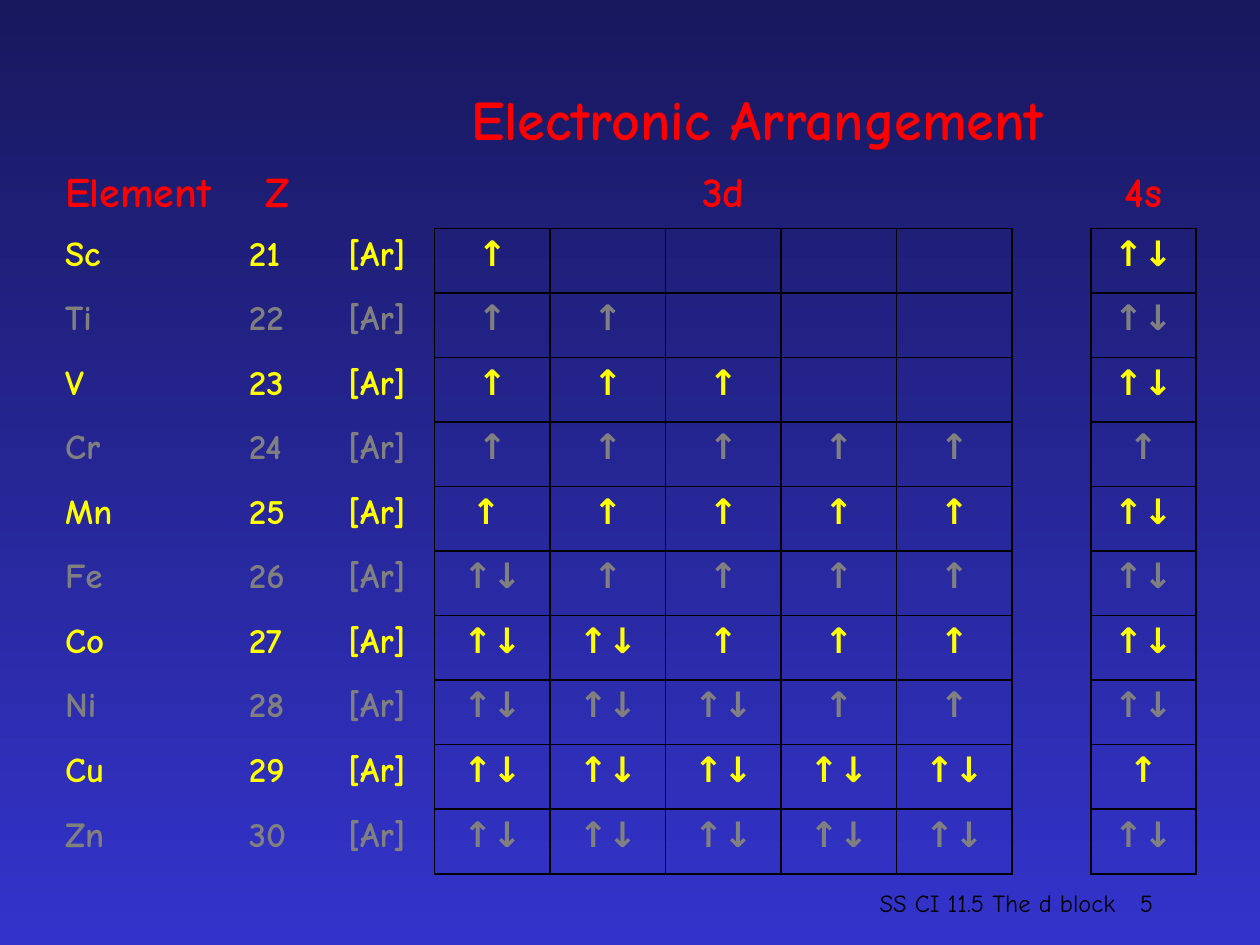
from dataclasses import dataclass

from lxml.etree import SubElement
from pptx import Presentation
from pptx.dml.color import RGBColor
from pptx.enum.text import MSO_ANCHOR, PP_ALIGN
from pptx.oxml.ns import qn
from pptx.slide import Slide
from pptx.util import Inches, Pt

UNIT = Inches(10) / 24  # the slide is a grid of 24 columns by 18 rows
RED, YELLOW, GRAY, BLACK = "FF0000", "FFFF00", "808080", "000000"
LEFT, CENTER, RIGHT = PP_ALIGN.LEFT, PP_ALIGN.CENTER, PP_ALIGN.RIGHT

# Symbol, electrons in 3d, electrons in 4s
ELEMENTS = [
    ("Sc", 1, 2), ("Ti", 2, 2), ("V", 3, 2), ("Cr", 5, 1), ("Mn", 5, 2),
    ("Fe", 6, 2), ("Co", 7, 2), ("Ni", 8, 2), ("Cu", 10, 1), ("Zn", 10, 2),
]
FIRST_ATOMIC_NUMBER = 21
FIRST_ELEMENT_ROW = 2
ORBITALS = 5
FIRST_3D, COLUMN_4S = 3, 9
COLUMN_WIDTHS = [3.5, 1.58] + [2.2] * (1 + ORBITALS) + [1.5, 2]
ROW_HEIGHTS = [1.44] + [1.23] * (1 + len(ELEMENTS))
EDGES = {"a:lnL": (0, -1), "a:lnR": (0, 1), "a:lnT": (-1, 0), "a:lnB": (1, 0)}


def color(hex_string):
    return RGBColor.from_string(hex_string)


def grid(units):
    return round(units * UNIT)


def write(text_frame, text, *, font, size, fill, bold=False, align=LEFT):
    paragraph = text_frame.paragraphs[0]
    paragraph.alignment = align
    run = paragraph.add_run()
    run.text = text
    run.font.name = font
    run.font.size = Pt(size)
    run.font.bold = bold
    run.font.color.rgb = color(fill)


def is_orbital(row, column):
    """Tell whether a cell is one of the outlined 3d or 4s boxes."""
    in_3d = FIRST_3D <= column < FIRST_3D + ORBITALS
    in_rows = FIRST_ELEMENT_ROW <= row < len(ROW_HEIGHTS)
    return in_rows and (in_3d or column == COLUMN_4S)


def arrows_3d(electrons):
    """Fill each orbital with one electron before pairing any."""
    return ["↑" * (electrons > box) + "↓" * (electrons > box + ORBITALS)
            for box in range(ORBITALS)]


@dataclass
class ArrangementSlide:
    slide: Slide
    font: str = "Comic Neue"

    def background(self, top, bottom):
        fill = self.slide.background.fill
        fill.gradient()
        fill.gradient_angle = 270
        for stop, shade in zip(fill.gradient_stops, (top, bottom)):
            stop.color.rgb = color(shade)

    def footer(self, text, left, width, align):
        box = self.slide.shapes.add_textbox(
            grid(left), grid(16.4), grid(width), grid(1.2))
        box.text_frame.word_wrap = True
        box.text_frame.vertical_anchor = MSO_ANCHOR.BOTTOM
        write(box.text_frame, text, font=self.font, size=14, fill=BLACK, align=align)

    def table(self, left, top):
        frame = self.slide.shapes.add_table(
            len(ROW_HEIGHTS), len(COLUMN_WIDTHS), grid(left), grid(top),
            grid(sum(COLUMN_WIDTHS)), grid(sum(ROW_HEIGHTS)))
        table = frame.table
        table.first_row = table.horz_banding = False
        for column, width in zip(table.columns, COLUMN_WIDTHS):
            column.width = grid(width)
        for row, height in zip(table.rows, ROW_HEIGHTS):
            row.height = grid(height)
        for row in range(len(ROW_HEIGHTS)):
            for column in range(len(COLUMN_WIDTHS)):
                self.outline(table.cell(row, column), row, column)
        return table

    def outline(self, cell, row, column):
        """Draw the edges an orbital box touches and clear all others."""
        properties = cell._tc.get_or_add_tcPr()
        for tag, (down, across) in EDGES.items():
            line = SubElement(properties, qn(tag), w=str(Pt(1)))
            if is_orbital(row, column) or is_orbital(row + down, column + across):
                solid = SubElement(line, qn("a:solidFill"))
                SubElement(solid, qn("a:srgbClr"), val=BLACK)
            else:
                SubElement(line, qn("a:noFill"))
        cell.fill.background()

    def entry(self, cell, text, size, fill, align=CENTER):
        write(cell.text_frame, text, font=self.font, size=size, fill=fill,
              bold=True, align=align)

    def headings(self, table):
        table.cell(0, 2).merge(table.cell(0, COLUMN_4S))
        table.cell(1, FIRST_3D).merge(table.cell(1, FIRST_3D + ORBITALS - 1))
        self.entry(table.cell(0, 2), "Electronic Arrangement", 32, RED)
        self.entry(table.cell(1, 0), "Element", 24, RED, LEFT)
        for column, text in ((1, "Z"), (FIRST_3D, "3d"), (COLUMN_4S, "4s")):
            self.entry(table.cell(1, column), text, 24, RED)

    def elements(self, table):
        for index, (symbol, in_3d, in_4s) in enumerate(ELEMENTS):
            boxes = arrows_3d(in_3d)
            if symbol == "Mn":
                boxes[0] += " "  # this arrow sits left of centre
            number = str(FIRST_ATOMIC_NUMBER + index)
            texts = [symbol, number, "[Ar]", *boxes, "", "↑↓"[:in_4s]]
            fill = GRAY if index % 2 else YELLOW
            for column, text in enumerate(texts):
                if text:
                    self.entry(table.cell(FIRST_ELEMENT_ROW + index, column), text,
                               20, fill, LEFT if column < 2 else CENTER)


def main():
    presentation = Presentation()
    presentation.slide_width = grid(24)
    presentation.slide_height = grid(18)
    page = ArrangementSlide(
        presentation.slides.add_slide(presentation.slide_layouts[6]))
    page.background("18185E", "3333CC")
    page.footer("SS CI 11.5 The d block", 15.2, 7.6, CENTER)
    page.footer("5", 17.2, 5, RIGHT)
    table = page.table(1, 1.6)
    page.headings(table)
    page.elements(table)
    presentation.save("out.pptx")


if __name__ == "__main__":
    main()
